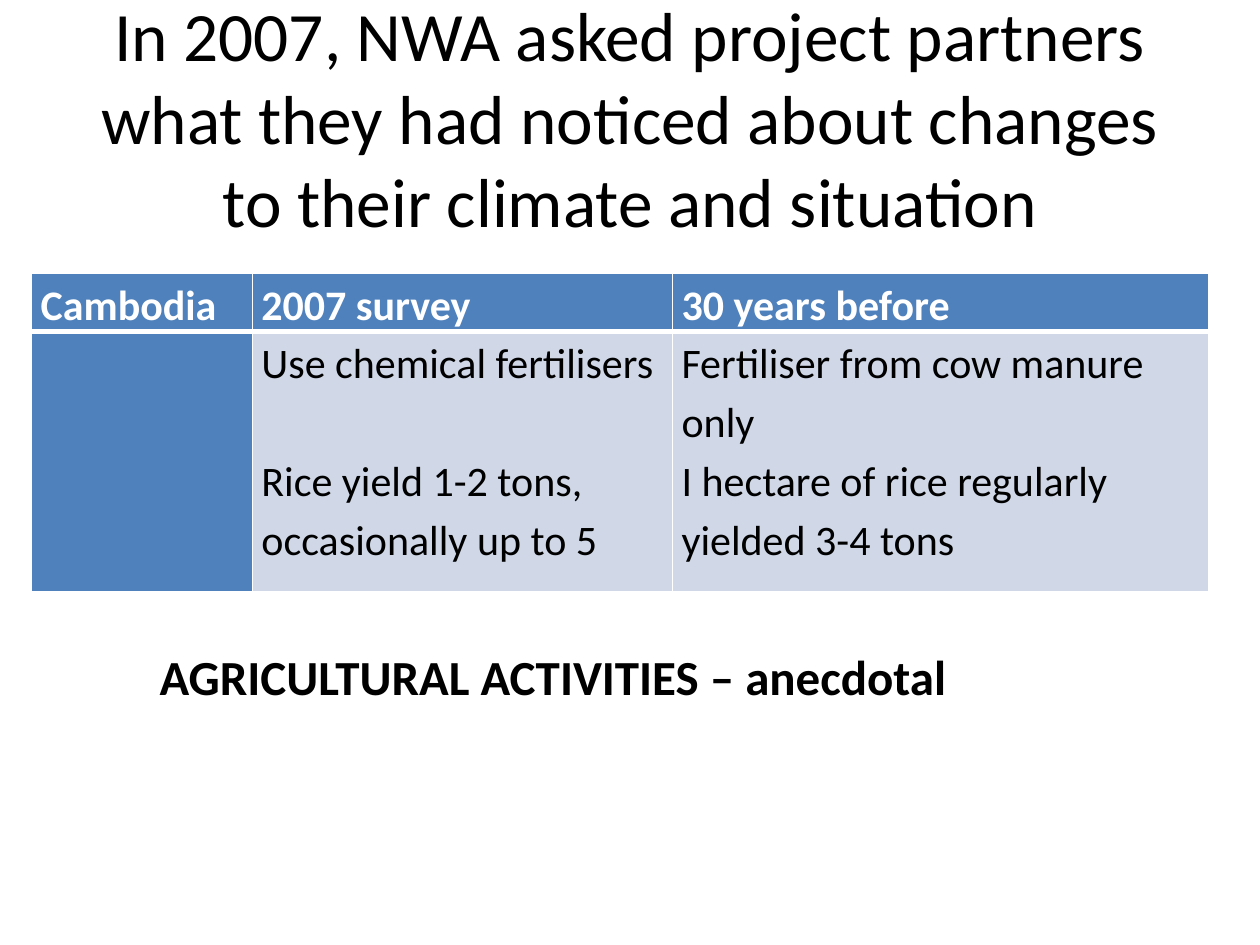
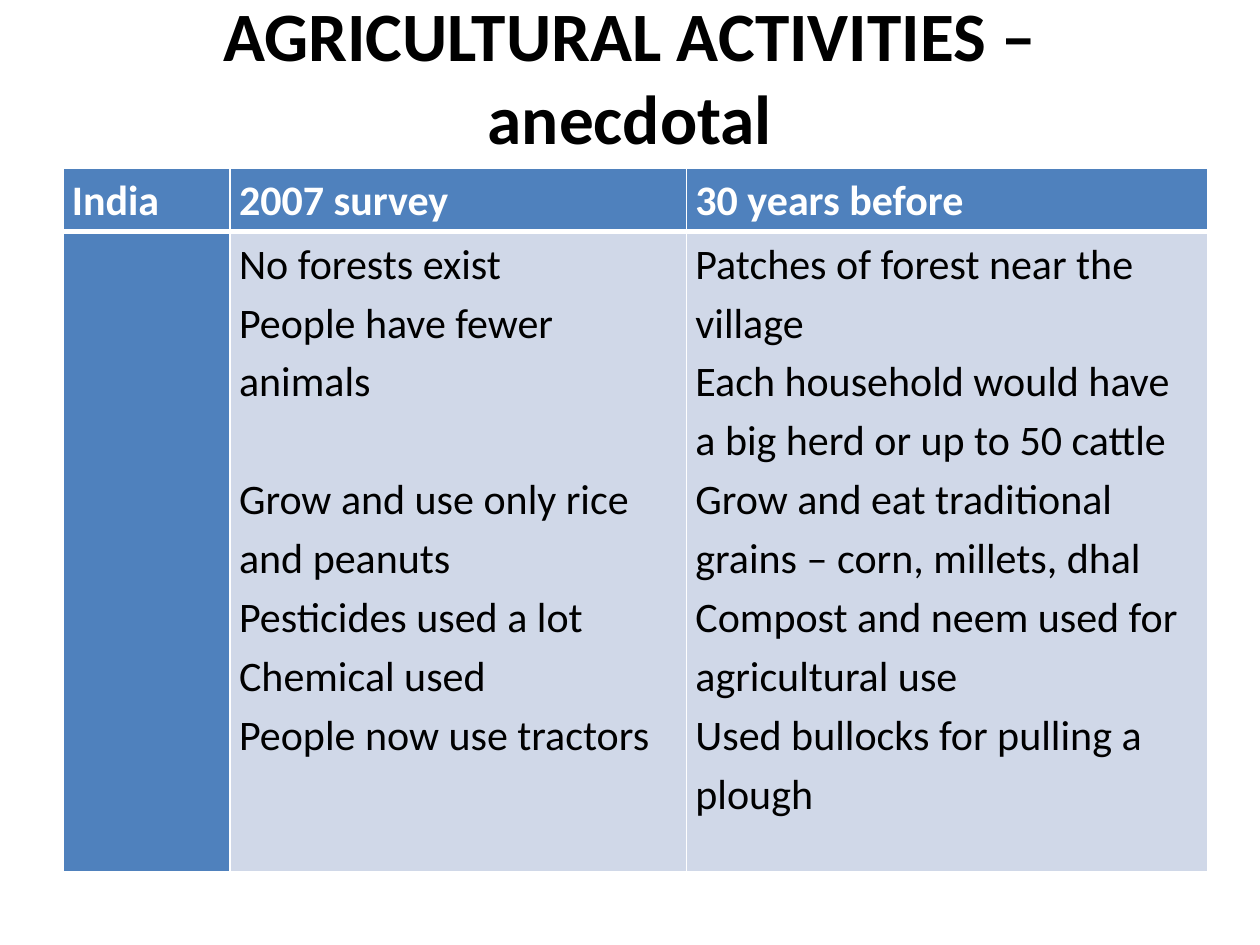
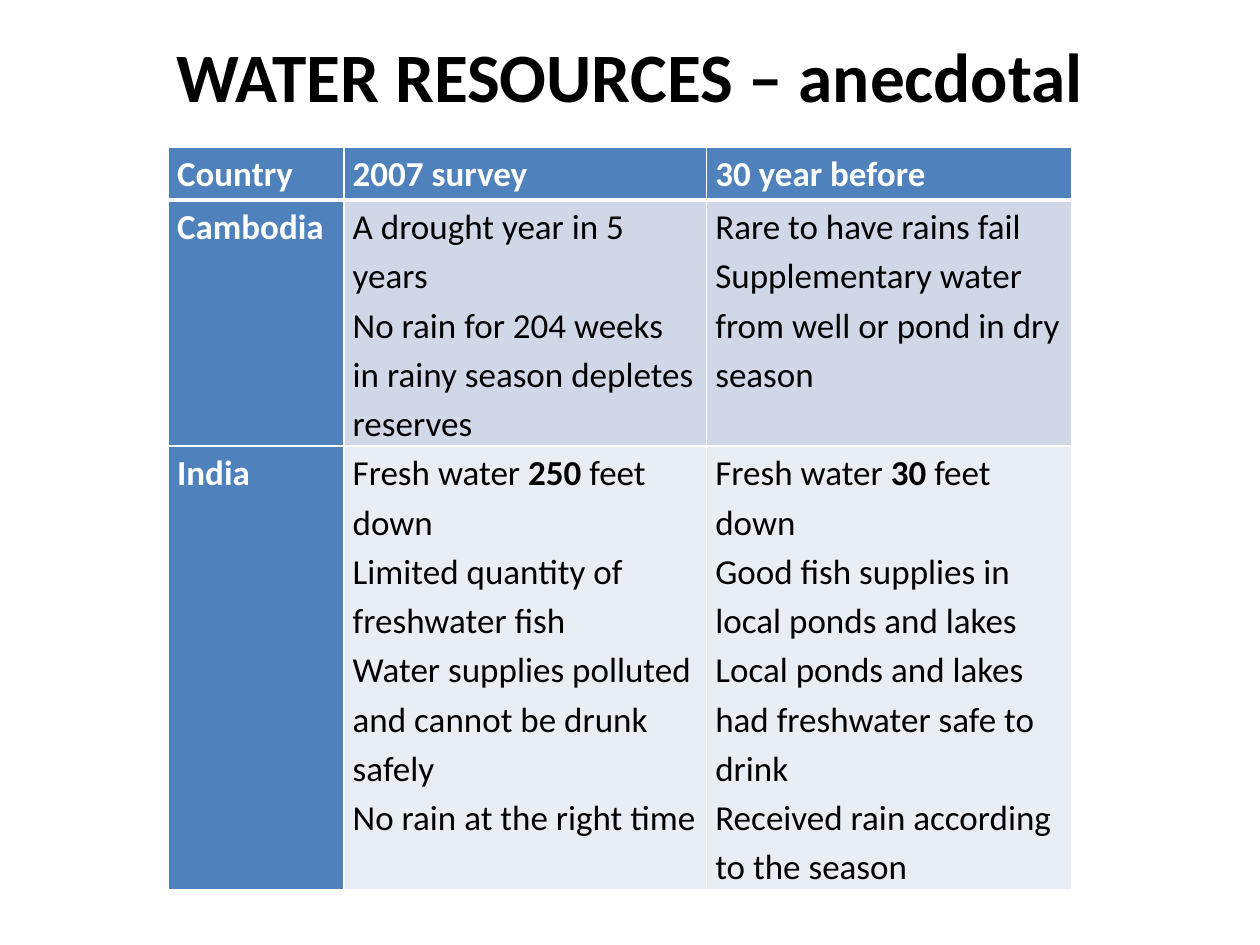
from lxml.etree import SubElement
from pptx import Presentation
from pptx.dml.color import RGBColor
from pptx.enum.text import MSO_ANCHOR, PP_ALIGN
from pptx.oxml.ns import qn
from pptx.util import Cm, Pt

FONT = "Calibri"
BLACK, WHITE, BLUE = "000000", "FFFFFF", "4F81BD"
BANDS = ["D0D8E8", "E9EDF4"]
TITLE_BOX = (1.27, 0.76, 22.86, 3.18)
TITLE_SIZE = 39.6
TITLE_LIFT = 1.67  # bottom inset that raises short titles above their table
SINGLE_LINE, LINE_SPACING = 1.22, 1.15


def color(value):
    return RGBColor.from_string(value)


def style(paragraph, size, ink=BLACK, bold=False):
    font = paragraph.font
    font.name, font.size, font.bold = FONT, Pt(size), bold
    font.color.rgb = color(ink)


def add_text(slide, box, text, size, bold=False):
    frame = slide.shapes.add_textbox(*map(Cm, box)).text_frame
    frame.word_wrap = True
    frame.text = text
    style(frame.paragraphs[0], size, bold=bold)
    return frame


def add_title(slide, text, bold=True, lift=TITLE_LIFT):
    frame = add_text(slide, TITLE_BOX, text, TITLE_SIZE, bold)
    frame.vertical_anchor = MSO_ANCHOR.MIDDLE
    frame.margin_bottom = Cm(0.13 + lift)
    frame.paragraphs[0].alignment = PP_ALIGN.CENTER


def set_borders(cell, top, bottom):
    """Draw white borders: 1 pt at the sides, the given points above and below."""
    properties = cell._tc.get_or_add_tcPr()
    for tag, width in (("lnL", 1), ("lnR", 1), ("lnT", top), ("lnB", bottom)):
        line = SubElement(properties, qn(f"a:{tag}"), w=str(Pt(width)))
        fill = SubElement(line, qn("a:solidFill"))
        SubElement(fill, qn("a:srgbClr"), val=WHITE)


def fill_cell(cell, lines, size, ink, bold):
    """Write one paragraph a line; "" leaves a line's gap, *stars* mark bold."""
    cell.margin_left = cell.margin_right = Cm(0.18)
    cell.margin_top = cell.margin_bottom = 0
    frame = cell.text_frame
    paragraph = frame.paragraphs[0]
    style(paragraph, size, ink, bold)
    gap = 0
    for index, line in enumerate(lines):
        if not line:
            gap = size * SINGLE_LINE * LINE_SPACING
            continue
        if index:
            paragraph = frame.add_paragraph()
            style(paragraph, size, ink, bold)
        paragraph.line_spacing = LINE_SPACING
        if gap:
            paragraph.space_before = Pt(gap)
            gap = 0
        for part, text in enumerate(line.split("*")):
            run = paragraph.add_run()
            run.text = text
            if part % 2:
                run.font.bold = True


def add_survey_table(slide, left, top, widths, heights, rows, size):
    frame = slide.shapes.add_table(
        len(rows), len(widths), Cm(left), Cm(top), Cm(sum(widths)), Cm(sum(heights)))
    table = frame.table
    table.horz_banding = False
    for column, width in zip(table.columns, widths):
        column.width = Cm(width)
    for row, height in zip(table.rows, heights):
        row.height = Cm(height)
    for row_index, row in enumerate(rows):
        for column_index, lines in enumerate(row):
            cell = table.cell(row_index, column_index)
            heading = row_index == 0 or column_index == 0
            set_borders(cell, 3 if row_index == 1 else 1, 3 if row_index == 0 else 1)
            cell.fill.solid()
            cell.fill.fore_color.rgb = color(BLUE if heading else BANDS[(row_index - 1) % 2])
            fill_cell(cell, lines, size, WHITE if heading else BLACK, heading)


def build_cambodia(slide):
    add_title(slide, "In 2007, NWA asked project partners what they had noticed "
              "about changes to their climate and situation", bold=False, lift=0)
    add_survey_table(slide, 0.64, 5.51, [4.45, 8.47, 10.8], [1.17, 5.25], [
        [["Cambodia"], ["2007 survey"], ["30 years before"]],
        [[],
         ["Use chemical fertilisers", "", "Rice yield 1-2 tons, occasionally up to 5"],
         ["Fertiliser from cow manure only",
          "I hectare of rice regularly yielded 3-4 tons"]],
    ], 24)
    add_text(slide, (2.97, 12.9, 17.78, 2.64),
             "AGRICULTURAL ACTIVITIES – anecdotal", 28, bold=True)


def build_india(slide):
    add_title(slide, "AGRICULTURAL ACTIVITIES – anecdotal")
    add_survey_table(slide, 1.27, 3.39, [3.37, 9.2, 10.5], [1.28, 12.9], [
        [["India"], ["2007 survey"], ["30 years before"]],
        [[],
         ["No forests exist", "People have fewer animals", "",
          "Grow and use only rice and peanuts", "Pesticides used a lot",
          "Chemical used", "People now use tractors"],
         ["Patches of forest near the village",
          "Each household would have a big herd or up to 50 cattle",
          "Grow and eat traditional grains – corn, millets, dhal",
          "Compost and neem used for agricultural use",
          "Used bullocks for pulling a plough"]],
    ], 24)


def build_water(slide):
    add_title(slide, "WATER RESOURCES – anecdotal")
    add_survey_table(slide, 3.39, 2.96, [3.54, 7.31, 7.37], [1.07, 4.96, 8.94], [
        [["Country"], ["2007 survey"], ["30 year before"]],
        [["Cambodia"],
         ["A drought year in 5 years",
          "No rain for 204 weeks in rainy season depletes reserves"],
         ["Rare to have rains fail",
          "Supplementary water from well or pond in dry season"]],
        [["India"],
         ["Fresh water *250* feet down", "Limited quantity of freshwater fish",
          "Water supplies polluted and cannot be drunk safely",
          "No rain at the right time"],
         ["Fresh water *30 *feet down", "Good fish supplies in local ponds and lakes",
          "Local ponds and lakes had freshwater safe to drink",
          "Received rain according to the season"]],
    ], 20)


def main():
    presentation = Presentation()
    presentation.slide_width, presentation.slide_height = Cm(25.4), Cm(19.05)
    for build in (build_cambodia, build_india, build_water):
        build(presentation.slides.add_slide(presentation.slide_layouts[6]))
    presentation.save("out.pptx")


if __name__ == "__main__":
    main()
